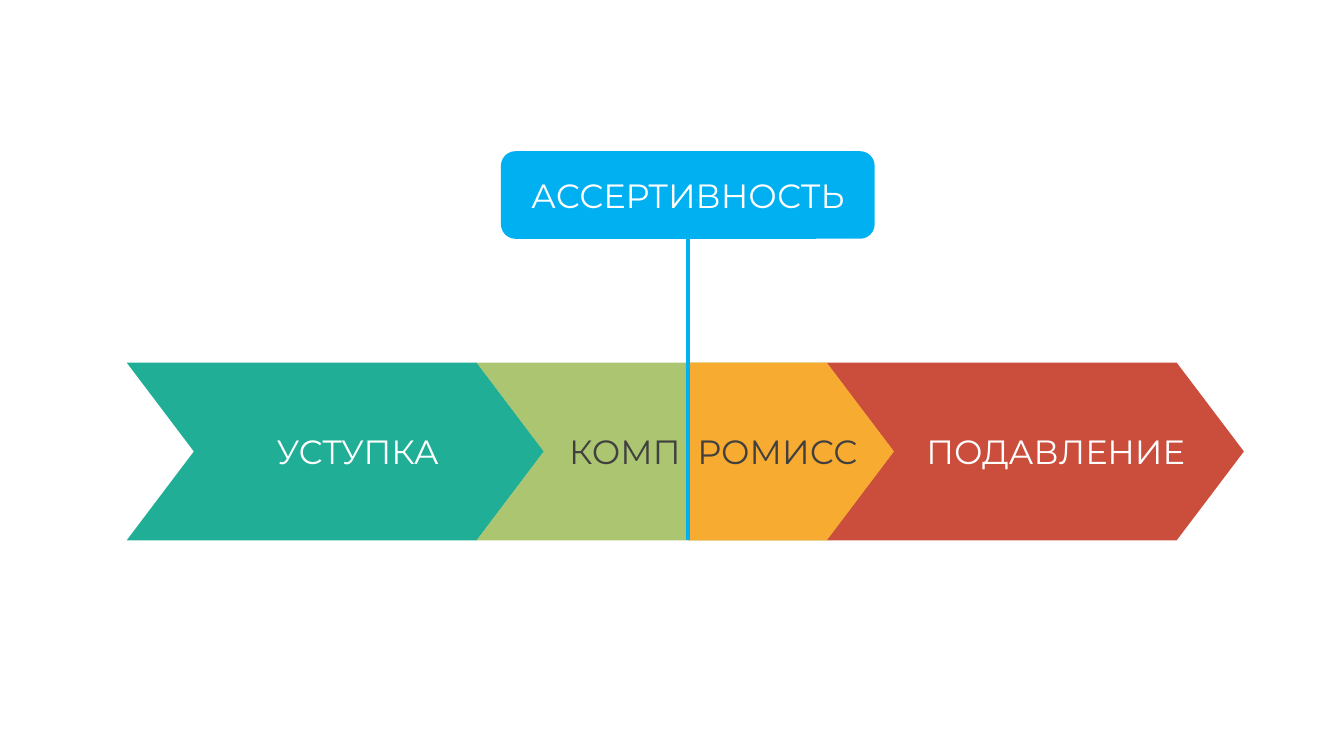
from dataclasses import dataclass
from typing import NamedTuple

from lxml import etree
from pptx import Presentation
from pptx.dml.color import RGBColor
from pptx.enum.shapes import MSO_CONNECTOR, MSO_SHAPE
from pptx.enum.text import MSO_ANCHOR, PP_ALIGN
from pptx.oxml.ns import qn
from pptx.util import Pt

CHEVRON, PENTAGON = MSO_SHAPE.CHEVRON, MSO_SHAPE.PENTAGON
ROUNDED = MSO_SHAPE.ROUNDED_RECTANGLE
STRAIGHT = MSO_CONNECTOR.STRAIGHT
LEFT, CENTER = PP_ALIGN.LEFT, PP_ALIGN.CENTER
MIDDLE = MSO_ANCHOR.MIDDLE


class Box(NamedTuple):
    left: float
    top: float
    width: float
    height: float

    def lengths(self):
        return [Pt(value) for value in self]


@dataclass(frozen=True)
class Theme:
    font: str = "Montserrat"
    size: float = 24
    line: float = 3
    white: str = "FFFFFF"
    dark: str = "404040"
    yielding: str = "20AE97"
    compromise: str = "ABC570"
    compromise_strong: str = "F7AB31"
    suppression: str = "CB4D3C"
    assertive: str = "00B0F0"


THEME = Theme()
POINT_RATIO = 0.378  # depth of an arrow point relative to its height


def add_filled(page, kind, box, color):
    shape = page.shapes.add_shape(kind, *box.lengths())
    shape.shadow.inherit = False
    shape.fill.solid()
    shape.fill.fore_color.rgb = RGBColor.from_string(color)
    shape.line.fill.background()
    return shape


def write(shape, text, color, align):
    frame = shape.text_frame
    frame.word_wrap = True
    frame.vertical_anchor = MIDDLE
    para = frame.paragraphs[0]
    para.alignment = align
    span = para.add_run()
    span.text = text
    span.font.name = THEME.font
    span.font.size = Pt(THEME.size)
    span.font.color.rgb = RGBColor.from_string(color)


def add_arrow_band(page, box, middle):
    """Three overlapping chevrons, the second one split at the middle line."""
    arrow_width = 298.08
    pitch = (box.width - arrow_width) / 2

    # Arrows
    colors = (THEME.yielding, THEME.compromise, THEME.suppression)
    for index, color in enumerate(colors):
        place = Box(box.left + index * pitch, box.top, arrow_width, box.height)
        add_filled(page, CHEVRON, place, color).adjustments[0] = POINT_RATIO

    # Right half of the compromise arrow
    split_end = box.left + pitch + arrow_width
    half = Box(middle, box.top, split_end - middle, box.height)
    add_filled(page, PENTAGON, half, THEME.compromise_strong).adjustments[0] = POINT_RATIO

    # Labels, centred on the band's height
    label_height = 36
    label_top = box.top + (box.height - label_height) / 2
    labels = (
        ("КОМП", 309, 97, THEME.dark, LEFT),
        ("РОМИСС", 400.5, 147.5, THEME.dark, LEFT),
        ("УСТУПКА", 49.5, 231, THEME.white, CENTER),
        ("ПОДАВЛЕНИЕ", 548, 231, THEME.white, CENTER),
    )
    for text, offset, width, color, align in labels:
        place = Box(box.left + offset, label_top, width, label_height)
        label = page.shapes.add_textbox(*place.lengths())
        write(label, text, color, align)


def add_callout(page, box, line_end):
    """A rounded box with a line that drops from its middle."""
    callout = add_filled(page, ROUNDED, box, THEME.assertive)
    write(callout, "АССЕРТИВНОСТЬ", THEME.white, CENTER)

    # Dividing line
    middle = Pt(box.left + box.width / 2)
    line = page.shapes.add_connector(
        STRAIGHT, middle, Pt(box.top + box.height), middle, Pt(line_end))
    line.line.color.rgb = RGBColor.from_string(THEME.assertive)
    line.line.width = Pt(THEME.line)
    etree.SubElement(line._element.spPr, qn("a:effectLst"))


def main():
    deck = Presentation()
    deck.slide_width, deck.slide_height = Pt(960), Pt(540)
    page = deck.slides.add_slide(deck.slide_layouts[6])

    band = Box(90.5, 259, 798, 127)
    callout = Box(357.8, 108, 267, 62.6)
    add_arrow_band(page, band, callout.left + callout.width / 2)
    add_callout(page, callout, band.top + band.height)

    deck.save("out.pptx")


if __name__ == "__main__":
    main()
